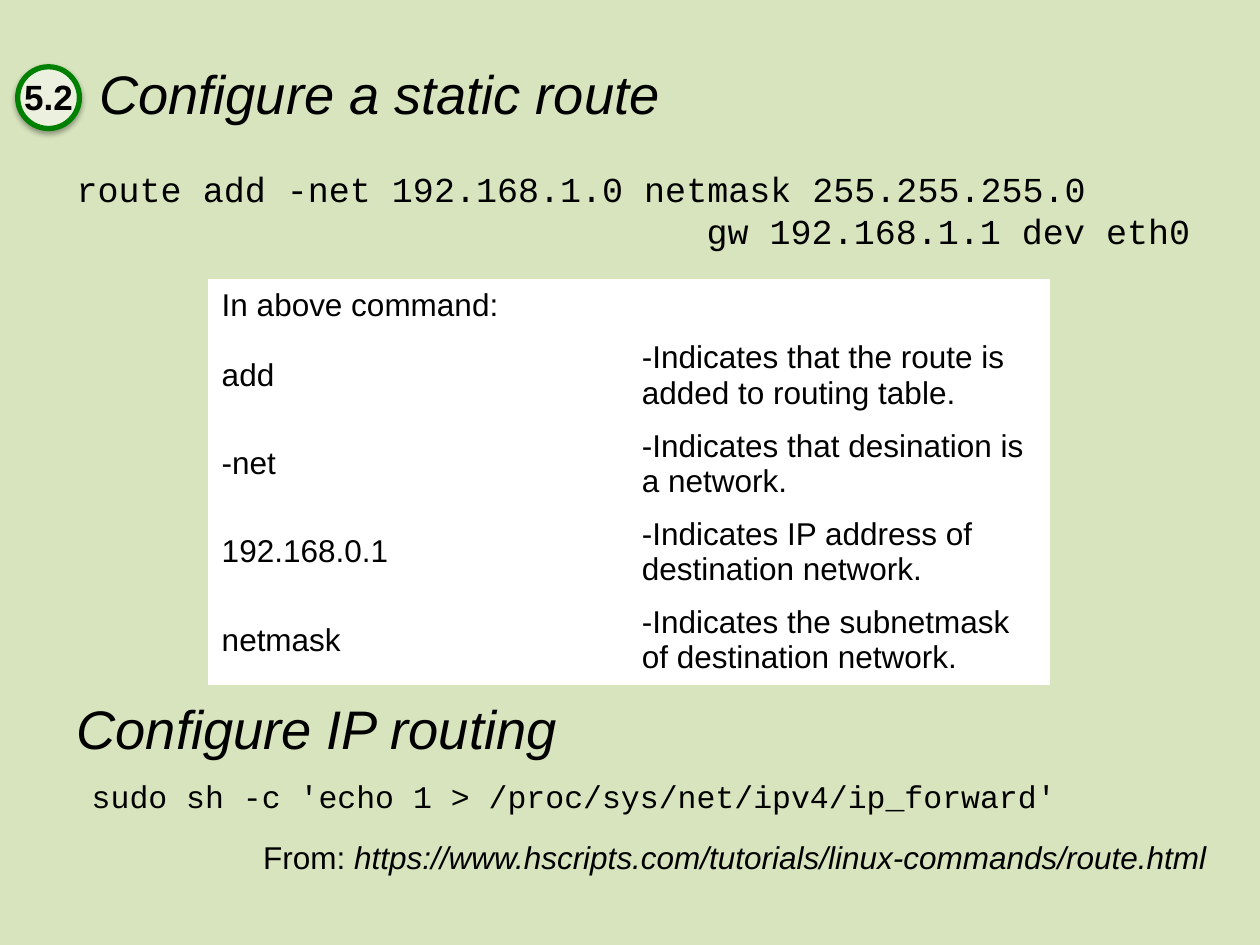
from dataclasses import dataclass

from lxml import etree
from pptx import Presentation, util as u
from pptx.dml.color import RGBColor
from pptx.enum import shapes, text
from pptx.oxml import ns

PX = 9144  # EMU per px, 100 px to the inch


@dataclass(frozen=True)
class Theme:
    background: str = "D7E4BD"
    badge: str = "EBF1DE"
    ring: str = "008000"
    ink: str = "000000"
    cell: str = "FFFFFF"
    sans: str = "Arial"
    mono: str = "Courier New"
    heading: int = 31
    command: int = 20
    body: int = 18


@dataclass(frozen=True)
class Area:
    left: int
    top: int
    width: int
    height: int

    def emu(self) -> list[int]:
        return [value * PX for value in (self.left, self.top, self.width, self.height)]


@dataclass(frozen=True)
class Span:
    words: str
    format: dict


@dataclass(frozen=True)
class Line:
    spans: tuple[Span, ...]
    indent: int = 0


@dataclass(frozen=True)
class Label:
    area: Area
    lines: tuple[Line, ...]


THEME = Theme()
BODY = {"name": THEME.sans, "size": u.Pt(THEME.body)}
HEADING = {"name": THEME.sans, "size": u.Pt(THEME.heading), "italic": True}
BADGE = {"name": THEME.sans, "size": u.Pt(THEME.command), "bold": True}
COMMAND = {"name": THEME.mono, "size": u.Pt(THEME.command)}
SHELL = {"name": THEME.mono, "size": u.Pt(THEME.body)}

NUMBER = Label(Area(9, 55, 59, 44), (Line((Span("5.2", BADGE),)),))
LABELS = (
    Label(Area(69, 43, 480, 62), (Line((Span("Configure a static route", HEADING),)),)),
    Label(Area(51, 128, 912, 77), (
        Line((Span("route add -net 192.168.1.0 netmask 255.255.255.0", COMMAND),)),
        Line((Span("gw 192.168.1.1 dev eth0", COMMAND),), indent=500),
    )),
    Label(Area(199, 660, 782, 40), (Line((
        Span("From: ", BODY),
        Span("https://www.hscripts.com/tutorials/linux-commands/route.html",
             BODY | {"italic": True}),
    )),)),
    Label(Area(63, 612, 793, 40), (
        Line((Span("sudo sh -c 'echo 1 > /proc/sys/net/ipv4/ip_forward'", SHELL),)),
    )),
    Label(Area(51, 547, 416, 62), (Line((Span("Configure IP routing", HEADING),)),)),
)

TABLE_AREA = Area(166, 222, 667, 321)
HEADER_HEIGHT = 41
OPTIONS = (
    ("In above command:", ""),
    ("add", "-Indicates that the route is added to routing table."),
    ("-net", "-Indicates that desination is a network."),
    ("192.168.0.1", "-Indicates IP address of destination network."),
    ("netmask", "-Indicates the subnetmask of destination network."),
)


def paint(fill, colour: str) -> None:
    fill.solid()
    fill.fore_color.rgb = RGBColor.from_string(colour)


def write_span(para, span: Span) -> None:
    run = para.add_run()
    run.text = span.words
    for name, value in span.format.items():
        setattr(run.font, name, value)
    run.font.color.rgb = RGBColor.from_string(THEME.ink)


def add_label(parent, label: Label, wrap: bool = True):
    box = parent.add_textbox(*label.area.emu())
    frame = box.text_frame
    frame.word_wrap = wrap
    for index, line in enumerate(label.lines):
        para = frame.add_paragraph() if index else frame.paragraphs[0]
        if line.indent:
            para._p.get_or_add_pPr().set("marL", str(line.indent * PX))
        for span in line.spans:
            write_span(para, span)
    return box


def add_drop_shadow(shape) -> None:
    shape.shadow.inherit = False
    effects = shape._element.spPr.find(ns.qn("a:effectLst"))
    shadow = etree.SubElement(effects, ns.qn("a:outerShdw"), blurRad="40000",
                              dist="23000", dir="5400000", rotWithShape="0")
    colour = etree.SubElement(shadow, ns.qn("a:srgbClr"), val=THEME.ink)
    etree.SubElement(colour, ns.qn("a:alpha"), val="35000")


def add_badge(page) -> None:
    group = page.shapes.add_group_shape().shapes
    circle = group.add_shape(shapes.MSO_SHAPE.OVAL, *Area(14, 53, 49, 49).emu())
    paint(circle.fill, THEME.badge)
    paint(circle.line.fill, THEME.ring)
    circle.line.width = u.Pt(3)
    add_drop_shadow(circle)
    box = add_label(group, NUMBER, wrap=False)
    box.text_frame.paragraphs[0].alignment = text.PP_ALIGN.CENTER


def add_option_table(page) -> None:
    table = page.shapes.add_table(len(OPTIONS), 2, *TABLE_AREA.emu()).table
    table.first_row = table.horz_banding = False
    option_height = (TABLE_AREA.height - HEADER_HEIGHT) // (len(OPTIONS) - 1)
    for index, words in enumerate(OPTIONS):
        table.rows[index].height = (option_height if index else HEADER_HEIGHT) * PX
        for cell, content in zip(table.rows[index].cells, words):
            paint(cell.fill, THEME.cell)
            cell.vertical_anchor = text.MSO_ANCHOR.MIDDLE
            if content:
                write_span(cell.text_frame.paragraphs[0], Span(content, BODY))
    table.cell(0, 0).merge(table.cell(0, 1))


def main() -> None:
    deck = Presentation()
    deck.slide_width, deck.slide_height = 1000 * PX, 750 * PX
    page = deck.slides.add_slide(deck.slide_layouts[6])
    paint(page.background.fill, THEME.background)
    add_badge(page)
    heading, command, *footer = LABELS
    for label in (heading, command):
        add_label(page.shapes, label)
    add_option_table(page)
    for label in footer:
        add_label(page.shapes, label)
    deck.save("out.pptx")


if __name__ == "__main__":
    main()
